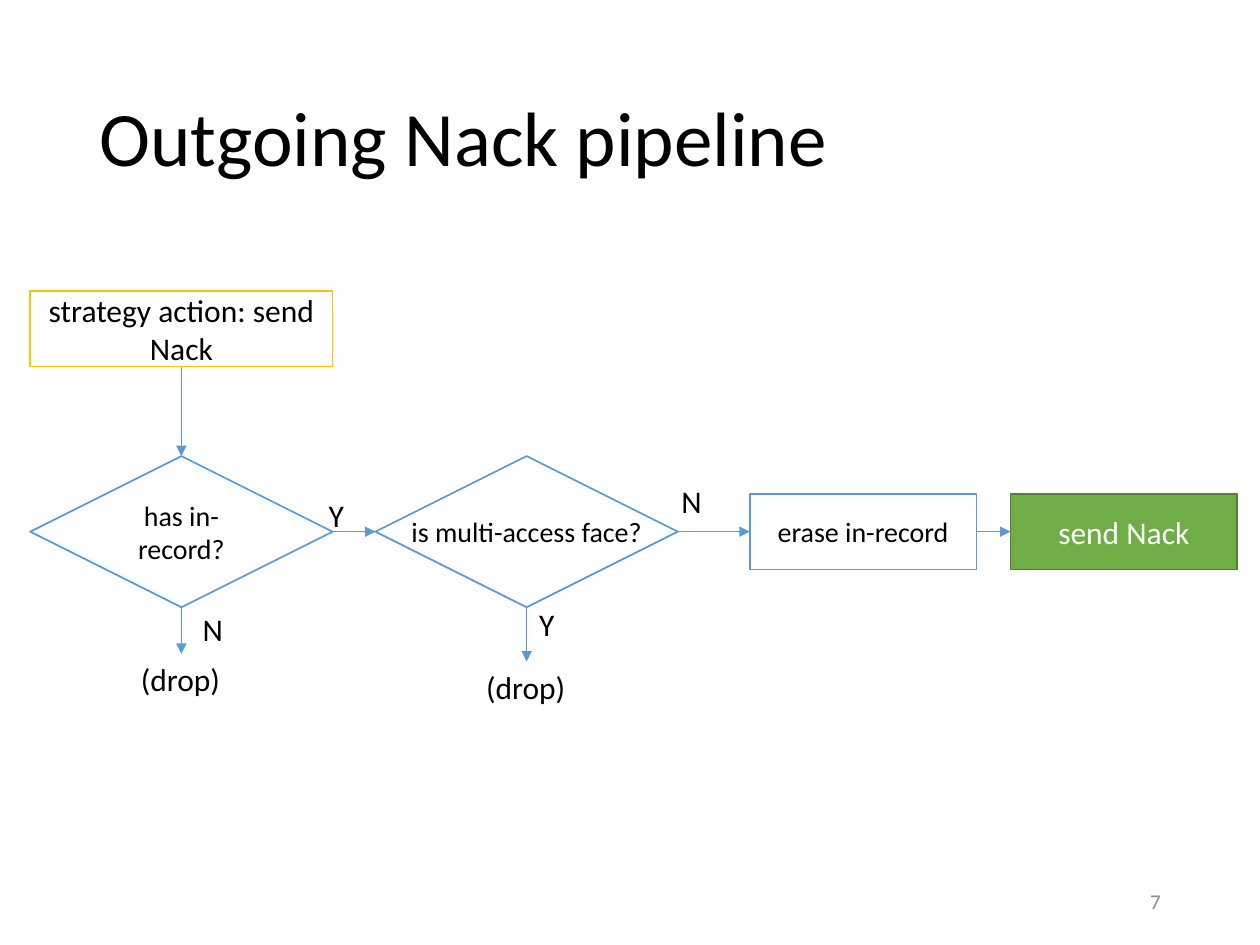
from lxml import etree
from pptx import Presentation
from pptx.dml.color import RGBColor
from pptx.enum import shapes, text
from pptx.oxml.ns import qn
from pptx.util import Inches, Pt

COLORS = {
    "black": "000000", "white": "FFFFFF", "gray": "8C8C8C", "blue": "5B9BD5",
    "gold": "FFC000", "green": "70AD47", "dark_green": "538035",
}
TOP, LEFT, BOTTOM, RIGHT = range(4)  # connection sites of boxes and diamonds


def color(name):
    return RGBColor.from_string(COLORS[name])


def write(frame, words, size=18, ink="black", align=text.PP_ALIGN.LEFT,
          anchor=text.MSO_ANCHOR.TOP, wrap=True, spacing=None):
    frame.word_wrap = wrap
    frame.vertical_anchor = anchor
    paragraph = frame.paragraphs[0]
    paragraph.alignment = align
    if spacing:
        paragraph.line_spacing = spacing
    run = paragraph.add_run()
    run.text = words
    run.font.name = "Calibri"
    run.font.size = Pt(size)
    run.font.color.rgb = color(ink)


class Flowchart:
    def __init__(self, slide):
        self.slide = slide

    def textbox(self, words, left, top, width, height, **style):
        box = self.slide.shapes.add_textbox(
            Inches(left), Inches(top), Inches(width), Inches(height))
        write(box.text_frame, words, **style)
        return box

    def label(self, words, left, top, width):
        """Add a short one-line text that fits its box to the words."""
        box = self.textbox(words, left, top, width, 0.4, wrap=False)
        box.text_frame.auto_size = text.MSO_AUTO_SIZE.SHAPE_TO_FIT_TEXT
        return box

    def node(self, kind, words, left, top, width, height,
             fill="white", line="blue", **style):
        shape = self.slide.shapes.add_shape(
            kind, Inches(left), Inches(top), Inches(width), Inches(height))
        shape.shadow.inherit = False
        shape.fill.solid()
        shape.fill.fore_color.rgb = color(fill)
        shape.line.color.rgb = color(line)
        shape.line.width = Pt(1)
        write(shape.text_frame, words, align=text.PP_ALIGN.CENTER,
              anchor=text.MSO_ANCHOR.MIDDLE, **style)
        return shape

    def box(self, words, left, top, width=1.8, **style):
        return self.node(shapes.MSO_SHAPE.RECTANGLE, words, left, top, width, 0.6, **style)

    def decision(self, words, left, **style):
        return self.node(shapes.MSO_SHAPE.FLOWCHART_DECISION, words,
                         left, 3.62, 2.4, 1.2, size=16, **style)

    def arrow(self, start, start_site, end, end_site):
        connector = self.slide.shapes.add_connector(
            shapes.MSO_CONNECTOR.STRAIGHT, 0, 0, 0, 0)
        connector.begin_connect(start, start_site)
        connector.end_connect(end, end_site)
        connector.line.color.rgb = color("blue")
        connector.line.width = Pt(0.5)
        etree.SubElement(connector.line._get_or_add_ln(), qn("a:tailEnd"), type="triangle")
        etree.SubElement(connector._element.spPr, qn("a:effectLst"))


def main():
    deck = Presentation()
    deck.slide_width, deck.slide_height = Inches(10), Inches(7.5)
    chart = Flowchart(deck.slides.add_slide(deck.slide_layouts[6]))
    middle = text.MSO_ANCHOR.MIDDLE

    chart.textbox("Outgoing Nack pipeline", 0.69, 0.4, 8.62, 1.45,
                  size=44, anchor=middle, spacing=0.9)

    action = chart.box("strategy action: send Nack", 0.24, 2.31, 2.4, line="gold")
    has_record = chart.decision("has in-record?", 0.24)
    multi_access = chart.decision("is multi-access face?", 2.98, wrap=False)
    erase = chart.box("erase in-record", 5.95, 3.92, size=16)
    send = chart.box("send Nack", 8.02, 3.92, fill="green", line="dark_green", ink="white")
    no_record_drop = chart.label("(drop)", 1.02, 5.19, 0.84)
    multi_access_drop = chart.label("(drop)", 3.76, 5.25, 0.84)

    chart.arrow(action, BOTTOM, has_record, TOP)
    chart.arrow(has_record, BOTTOM, no_record_drop, TOP)
    chart.arrow(multi_access, BOTTOM, multi_access_drop, TOP)
    for step, following in [(has_record, multi_access), (multi_access, erase), (erase, send)]:
        chart.arrow(step, RIGHT, following, LEFT)

    for answer, left, top, width in [
        ("Y", 2.51, 3.89, 0.32), ("N", 1.51, 4.79, 0.36),
        ("N", 5.31, 3.78, 0.36), ("Y", 4.18, 4.75, 0.32),
    ]:
        chart.label(answer, left, top, width)

    chart.textbox("7", 7.06, 6.95, 2.25, 0.4, size=12, ink="gray",
                  align=text.PP_ALIGN.RIGHT, anchor=middle)
    deck.save("out.pptx")


if __name__ == "__main__":
    main()
